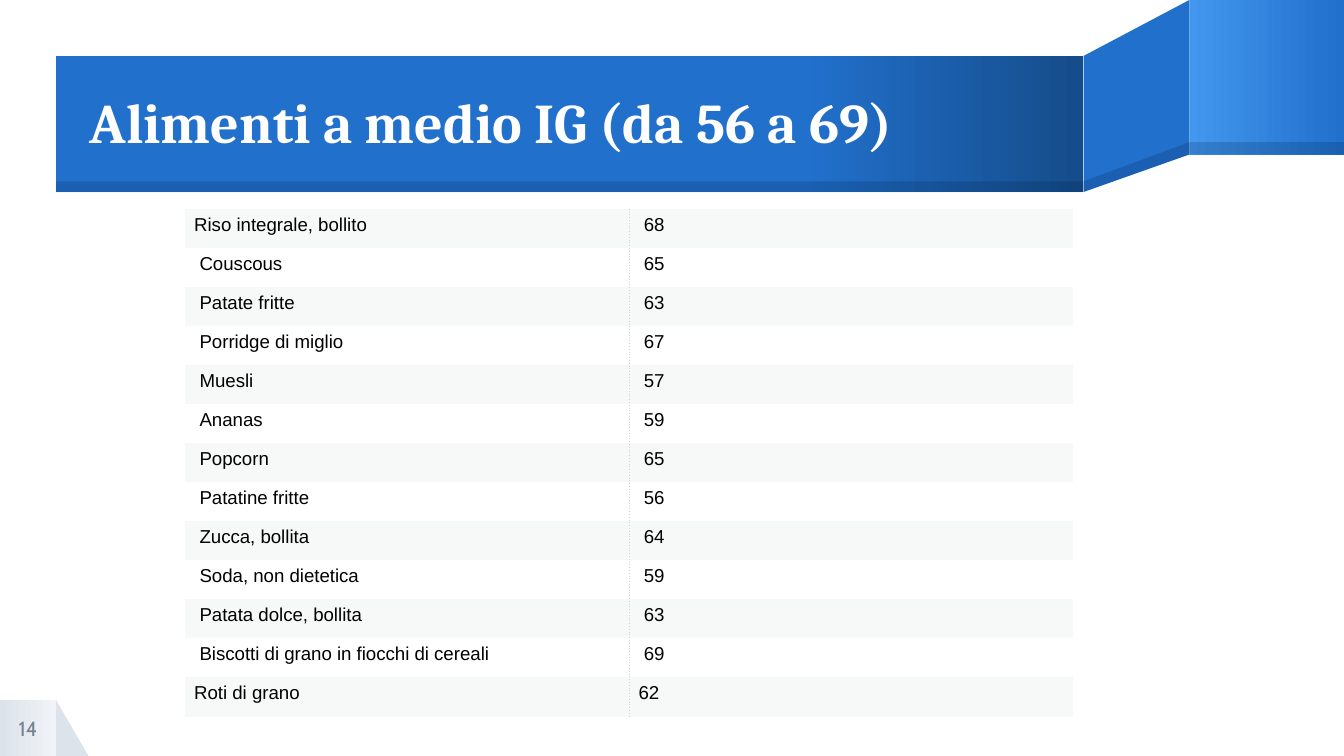
"""Build the slide on foods with a medium glycaemic index."""
from copy import deepcopy

from pptx import Presentation
from pptx.dml.color import RGBColor
from pptx.enum.shapes import MSO_SHAPE
from pptx.enum.text import MSO_ANCHOR, PP_ALIGN
from pptx.oxml import parse_xml
from pptx.oxml.ns import nsdecls, qn
from pptx.oxml.xmlchemy import OxmlElement
from pptx.util import Inches, Pt

WIDTH, HEIGHT = Inches(10), Inches(5.625)
UNIT = WIDTH / 24
BLUE = RGBColor(0x21, 0x70, 0xCC)
LIGHT = RGBColor(0x43, 0x97, 0xEE)
DARK = RGBColor(0x15, 0x4C, 0x8A)
NAVY = RGBColor(0x00, 0x1F, 0x46)
GREY = RGBColor(0xDD, 0xE3, 0xEB)
PALE = RGBColor(0xF0, 0xF3, 0xF7)
SLATE = RGBColor(0x74, 0x83, 0x94)
BAND = RGBColor(0xF7, 0xF9, 0xF9)
RULE = RGBColor(0xD3, 0xD3, 0xD3)
WHITE = RGBColor(0xFF, 0xFF, 0xFF)
BLACK = RGBColor(0x00, 0x00, 0x00)
PLAIN = "{2D5ABB26-0587-4C30-8999-92F81FD0307C}"

FOLD, CREASE = 19.35, 21.24
EDGE, BASE = 3.24, 3.43
BACK, FLOOR = 2.54, 2.76
FOOT = 12.5
FOODS = [
    ("Riso integrale, bollito", "68"),
    ("Couscous", "65"),
    ("Patate fritte", "63"),
    ("Porridge di miglio", "67"),
    ("Muesli", "57"),
    ("Ananas", "59"),
    ("Popcorn", "65"),
    ("Patatine fritte", "56"),
    ("Zucca, bollita", "64"),
    ("Soda, non dietetica", "59"),
    ("Patata dolce, bollita", "63"),
    ("Biscotti di grano in fiocchi di cereali", "69"),
    ("Roti di grano", "62"),
]
FLUSH = {(0, 0), (12, 0), (12, 1)}


def grid(*cells):
    """Turn grid units into lengths."""
    return [round(cell * UNIT) for cell in cells]


def paint(shape, color, alpha=None):
    """Fill a shape with one flat colour, without line or shadow."""
    shape.shadow.inherit = False
    shape.line.fill.background()
    shape.fill.solid()
    shape.fill.fore_color.rgb = color
    if alpha:
        tint = OxmlElement("a:alpha")
        tint.set("val", str(alpha * 1000))
        shape.fill._xPr.find(".//" + qn("a:srgbClr")).append(tint)


def blend(shape, *stops):
    """Fill a shape with a gradient from left to right."""
    fill = shape.fill
    fill.gradient()
    fill.gradient_angle = 0
    first = shape.element.spPr.find(".//" + qn("a:gs"))
    for _ in stops[2:]:
        first.addnext(deepcopy(first))
    for stop, (place, color) in zip(fill.gradient_stops, stops):
        stop.position = place
        stop.color.rgb = color


def block(slide, box, color, alpha=None, kind=MSO_SHAPE.RECTANGLE):
    """Add a preset shape on the grid."""
    shape = slide.shapes.add_shape(kind, *grid(*box))
    paint(shape, color, alpha)
    return shape


def panel(slide, points, color, alpha=None):
    """Add a closed outline on the grid."""
    start, *rest = [grid(*point) for point in points]
    pen = slide.shapes.build_freeform(*start)
    pen.add_line_segments(rest, close=True)
    paint(pen.convert_to_shape(), color, alpha)


def style(para, name, size, color, bold=False):
    """Set the font of each run in a paragraph."""
    for run in para.runs:
        font = run.font
        font.name, font.size, font.bold = name, Pt(size), bold
        font.color.rgb = color


def label(slide, box, text):
    """Add a text box centred on its height and return its paragraph."""
    frame = slide.shapes.add_textbox(*grid(*box)).text_frame
    frame.word_wrap = True
    frame.vertical_anchor = MSO_ANCHOR.MIDDLE
    frame.margin_left = frame.margin_right = 0
    frame.margin_top = frame.margin_bottom = 0
    frame.text = text
    return frame.paragraphs[0]


def border(cell, side):
    """Draw a dotted rule on one side of a cell."""
    cell._tc.get_or_add_tcPr().insert(0, parse_xml(
        f'<a:{side} {nsdecls("a")} w="6350"><a:solidFill>'
        f'<a:srgbClr val="{RULE}"/></a:solidFill>'
        f'<a:prstDash val="sysDot"/></a:{side}>'))


def chart_foods(slide, box):
    """Add the table of foods and their index."""
    frame = slide.shapes.add_table(len(FOODS), 2, *grid(*box))
    table = frame.table
    table.first_row = table.horz_banding = False
    table._tbl.tblPr.find(qn("a:tableStyleId")).text = PLAIN
    for row, food in enumerate(FOODS):
        for col, text in enumerate(food):
            cell = table.cell(row, col)
            inset = 0.07 if (row, col) in FLUSH else 0.11
            cell.margin_left, cell.margin_right = Inches(inset), Inches(0.07)
            cell.margin_top = cell.margin_bottom = Inches(0.04)
            border(cell, "lnL" if col else "lnR")
            cell.fill.solid()
            cell.fill.fore_color.rgb = WHITE if row % 2 else BAND
            cell.text_frame.text = text
            style(cell.text_frame.paragraphs[0], "Arial", 10, BLACK)


def ribbon(slide):
    """Draw the folded ribbon behind the title."""
    panel(slide, [(CREASE, 0), (FOLD, 1), (FOLD, BASE), (CREASE, FLOOR)], BLUE)
    tail = block(slide, (CREASE, 0, 24 - CREASE, FLOOR), BLUE)
    blend(tail, (0, LIGHT), (1, BLUE))
    front = block(slide, (1, 1, FOLD - 1, BASE - 1), BLUE)
    blend(front, (0, BLUE), (0.73, BLUE), (1, DARK))
    panel(slide, [(CREASE, BACK), (FOLD, EDGE), (FOLD, BASE), (CREASE, FLOOR)],
          NAVY, 20)
    block(slide, (CREASE, BACK, 24 - CREASE, FLOOR - BACK), NAVY, 20)
    block(slide, (1, EDGE, FOLD - 1, BASE - EDGE), NAVY, 20)


def main():
    """Build and save the slide."""
    deck = Presentation()
    deck.slide_width, deck.slide_height = WIDTH, HEIGHT
    slide = deck.slides.add_slide(deck.slide_layouts[6])

    block(slide, (1, FOOT, 0.58, 1), GREY, kind=MSO_SHAPE.RIGHT_TRIANGLE)
    blend(block(slide, (0, FOOT, 1, 1), GREY), (0, GREY), (1, PALE))
    ribbon(slide)

    title = label(slide, (1.6, 1.03, FOLD - 1.6, BASE - 1),
                  "Alimenti a medio IG (da 56 a 69)")
    title.line_spacing = 0.9
    style(title, "Cambria", 30, WHITE, True)
    number = label(slide, (0, FOOT, 1, 1), "14")
    number.alignment = PP_ALIGN.CENTER
    style(number, "Cabin", 11, SLATE)
    chart_foods(slide, (3.3, 3.73, 15.87, 9.07))
    deck.save("out.pptx")


if __name__ == "__main__":
    main()
